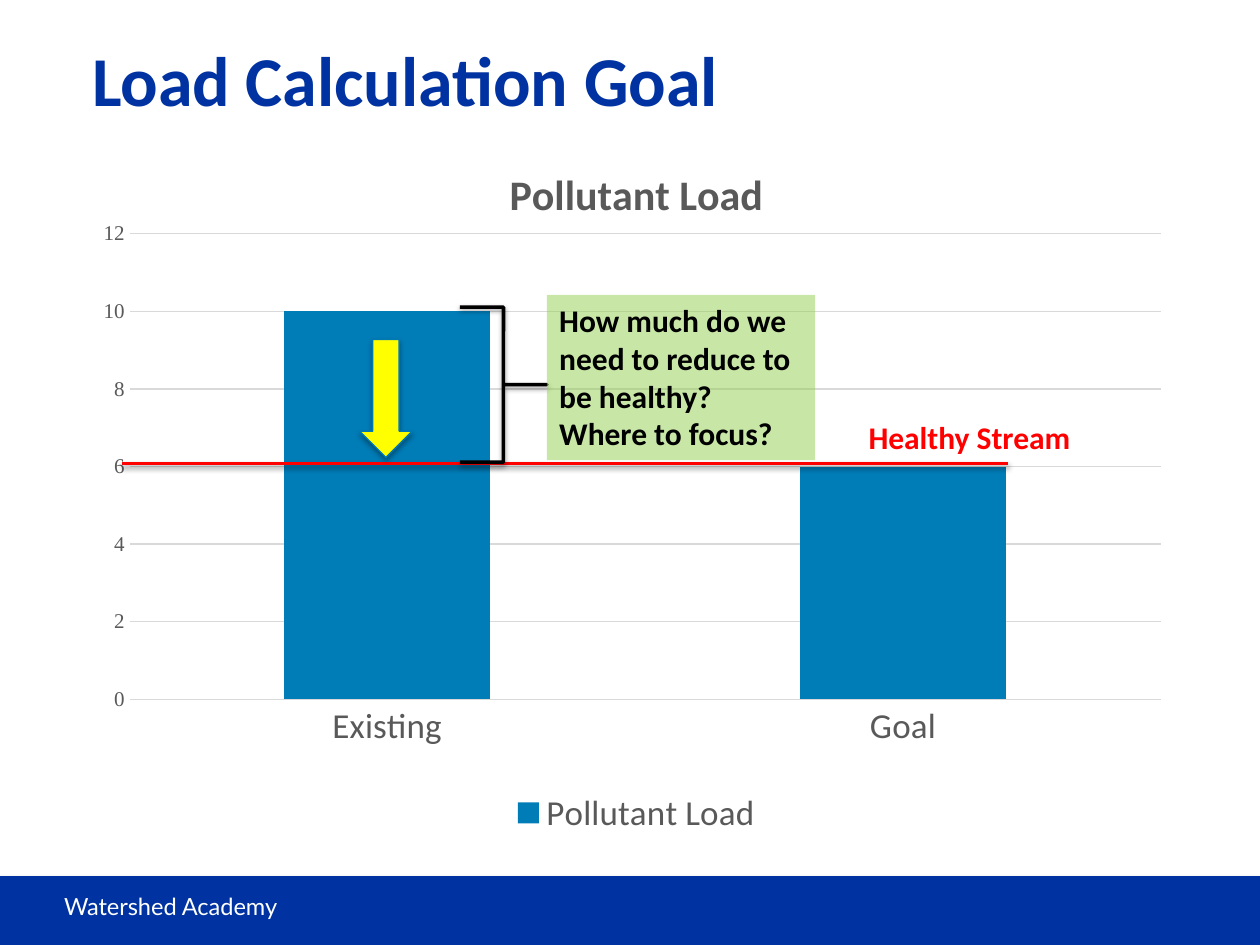
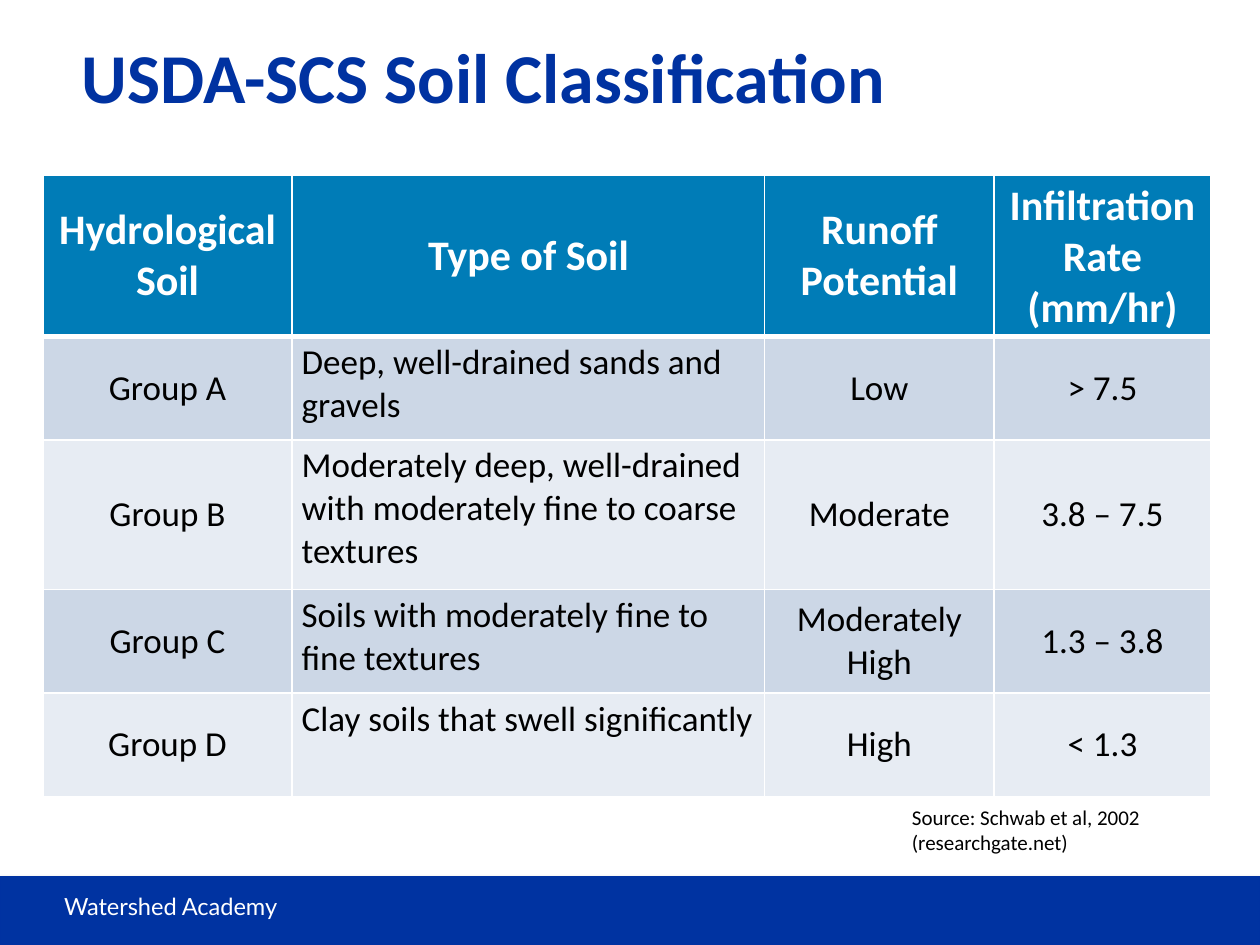
from typing import NamedTuple

from lxml.etree import SubElement
from pptx import Presentation
from pptx.chart.data import CategoryChartData
from pptx.dml.color import RGBColor
from pptx.enum.chart import XL_CHART_TYPE, XL_LEGEND_POSITION, XL_TICK_MARK
from pptx.enum.shapes import MSO_CONNECTOR, MSO_SHAPE
from pptx.enum.text import MSO_ANCHOR, PP_ALIGN
from pptx.oxml import parse_xml
from pptx.oxml.ns import nsdecls, qn
from pptx.util import Pt

COLORS = {
    "navy": "0032A1", "band": "0033A1", "blue": "007CB7", "arrow_edge": "0079B3",
    "row_dark": "CCD7E6", "row_light": "E7ECF3", "green": "92D050", "yellow": "FFFF00",
    "red": "FF0000", "gray": "595959", "grid": "D9D9D9", "white": "FFFFFF", "black": "000000",
}


class Area(NamedTuple):
    left: float
    top: float
    width: float
    height: float

    def lengths(self) -> list:
        return [Pt(value) for value in self]


class TextStyle(NamedTuple):
    size: float
    color: str = "black"
    bold: bool = False
    name: str = "Calibri"


TITLE = TextStyle(40, "navy", True)
FOOTER = TextStyle(13.5, "white", name="Lato")
CALLOUT = TextStyle(18, bold=True)
THRESHOLD = TextStyle(18, "red", True)
SOURCE = TextStyle(12)
CHART_TITLE = TextStyle(24, "gray", True)
CHART_LABEL = TextStyle(20, "gray")
CHART_NUMBER = TextStyle(12, "gray", name="Times New Roman")
TABLE_HEAD = TextStyle(24, "white", True)
TABLE_BODY = TextStyle(20)

COLUMN_WIDTHS = [142.5, 270, 131, 124]
ROW_HEIGHTS = [85.7, 59.1, 85.7, 59.1, 59.1]
SOIL_ROWS = [
    ["Hydrological Soil", "Type of Soil", "Runoff Potential", "Infiltration Rate (mm/hr)"],
    ["Group A", "Deep, well-drained sands and gravels", "Low", "> 7.5"],
    ["Group B", "Moderately deep, well-drained with moderately fine to coarse textures",
     "Moderate", "3.8 – 7.5"],
    ["Group C", "Soils with moderately fine to fine textures", "Moderately High", "1.3 – 3.8"],
    ["Group D", "Clay soils that swell significantly", "High", "< 1.3"],
]
DESCRIPTION_COLUMN = 1


def rgb(color: str) -> RGBColor:
    return RGBColor.from_string(COLORS[color])


def style_font(font, style: TextStyle) -> None:
    font.name = style.name
    font.size = Pt(style.size)
    font.bold = style.bold
    font.color.rgb = rgb(style.color)


def write(frame, lines: list[str], style: TextStyle, align=PP_ALIGN.LEFT) -> None:
    frame.word_wrap = True
    for index, line in enumerate(lines):
        para = frame.add_paragraph() if index else frame.paragraphs[0]
        para.alignment = align
        span = para.add_run()
        span.text = line
        style_font(span.font, style)


def add_text(page, area: Area, text: str, style: TextStyle) -> None:
    box = page.shapes.add_textbox(*area.lengths())
    write(box.text_frame, [text], style)


def set_line(line, color: str, width: float) -> None:
    line.color.rgb = rgb(color)
    line.width = Pt(width)


def cast_shadow(shape, alpha: int = 35, distance: float = 1.8) -> None:
    """Add a soft downward shadow; call it once fill and line are set."""
    effects = SubElement(shape._element.spPr, qn("a:effectLst"))
    effects.append(parse_xml(
        f'<a:outerShdw {nsdecls("a")} blurRad="{Pt(3.1)}" dist="{Pt(distance)}" dir="5400000"'
        f' rotWithShape="0"><a:srgbClr val="{COLORS["black"]}"><a:alpha val="{alpha * 1000}"/>'
        '</a:srgbClr></a:outerShdw>'))


def add_shape(page, kind, area: Area, fill: str | None = None,
              edge: str | None = None, edge_width: float = 0.75):
    shape = page.shapes.add_shape(kind, *area.lengths())
    if fill:
        shape.fill.solid()
        shape.fill.fore_color.rgb = rgb(fill)
    else:
        shape.fill.background()
    if edge:
        set_line(shape.line, edge, edge_width)
    else:
        shape.line.fill.background()
    return shape


def add_page(deck, title: str, title_area: Area):
    """Add a slide with the shared footer band and title."""
    page = deck.slides.add_slide(deck.slide_layouts[5])
    band = add_shape(page, MSO_SHAPE.RECTANGLE, Area(0, 501, 720, 38.5), "band", "navy")
    cast_shadow(band)
    add_text(page, Area(29.5, 506, 242, 24), "Watershed Academy", FOOTER)
    heading = page.shapes.title
    heading.left, heading.top, heading.width, heading.height = title_area.lengths()
    heading.text_frame.vertical_anchor = MSO_ANCHOR.MIDDLE
    write(heading.text_frame, [title], TITLE)
    return page


def place_plot(chart, x: float, y: float, width: float, height: float) -> None:
    """Fix the inner plot area, in fractions of the chart."""
    plot_area = chart._chartSpace.chart.plotArea
    for layout in plot_area.findall(qn("c:layout")):
        plot_area.remove(layout)
    values = {"layoutTarget": "inner", "xMode": "edge", "yMode": "edge",
              "x": x, "y": y, "w": width, "h": height}
    parts = "".join(f'<c:{tag} val="{value}"/>' for tag, value in values.items())
    plot_area.insert(0, parse_xml(
        f'<c:layout {nsdecls("c")}><c:manualLayout>{parts}</c:manualLayout></c:layout>'))


def add_load_chart(page) -> None:
    data = CategoryChartData()
    data.categories = ["Existing", "Goal"]
    data.add_series("Pollutant Load", [10, 6])
    area = Area(45.4, 78.5, 636.5, 402.5)
    chart = page.shapes.add_chart(XL_CHART_TYPE.COLUMN_STACKED, *area.lengths(), data).chart
    style_font(chart.font, CHART_NUMBER)
    chart.has_title = True
    write(chart.chart_title.text_frame, ["Pollutant Load"], CHART_TITLE, PP_ALIGN.CENTER)
    chart.chart_title.include_in_layout = False
    chart.has_legend = True
    chart.legend.position = XL_LEGEND_POSITION.BOTTOM
    chart.legend.include_in_layout = False
    style_font(chart.legend.font, CHART_LABEL)

    plot = chart.plots[0]
    plot.gap_width, plot.overlap, plot.vary_by_categories = 150, 100, False
    bars = plot.series[0].format.fill
    bars.solid()
    bars.fore_color.rgb = rgb("blue")

    for axis, style in ((chart.category_axis, CHART_LABEL), (chart.value_axis, CHART_NUMBER)):
        axis.major_tick_mark = axis.minor_tick_mark = XL_TICK_MARK.NONE
        style_font(axis.tick_labels.font, style)
    set_line(chart.category_axis.format.line, "grid", 0.75)
    loads = chart.value_axis
    loads.minimum_scale, loads.maximum_scale, loads.major_unit = 0, 12, 2
    loads.format.line.fill.background()
    set_line(loads.major_gridlines.format.line, "grid", 0.75)
    place_plot(chart, 0.045, 0.137, 0.926, 0.661)


def build_load_page(deck) -> None:
    page = add_page(deck, "Load Calculation Goal", Area(45.4, 10.8, 556, 67.7))
    add_load_chart(page)

    threshold = page.shapes.add_connector(
        MSO_CONNECTOR.STRAIGHT, Pt(70), Pt(264.8), Pt(576), Pt(264.8))
    set_line(threshold.line, "red", 2)
    cast_shadow(threshold, 38, 1.6)

    arrow = add_shape(page, MSO_SHAPE.DOWN_ARROW, Area(205.6, 194, 30, 67.4),
                      "yellow", "arrow_edge")
    cast_shadow(arrow)

    bracket = add_shape(page, MSO_SHAPE.RIGHT_BRACE, Area(262.8, 175.5, 49.8, 88.6),
                        edge="black", edge_width=2)
    bracket.adjustments[0] = 0
    bracket.adjustments[1] = 0.5
    cast_shadow(bracket, 38, 1.6)

    callout = add_shape(page, MSO_SHAPE.RECTANGLE, Area(312.5, 168.5, 153.3, 94.5), "green")
    callout.shadow.inherit = False
    tint = callout._element.spPr.find(qn("a:solidFill"))[0]
    SubElement(tint, qn("a:alpha")).set("val", "50000")
    callout.text_frame.vertical_anchor = MSO_ANCHOR.TOP
    write(callout.text_frame,
          ["How much do we need to reduce to be healthy?", "Where to focus?"], CALLOUT)
    add_text(page, Area(489.2, 235.5, 168, 29), "Healthy Stream", THRESHOLD)


def set_borders(cell, top: float, bottom: float) -> None:
    """Draw white cell borders; call it before the fill is set."""
    properties = cell._tc.get_or_add_tcPr()
    for side, width in {"L": 1, "R": 1, "T": top, "B": bottom}.items():
        properties.append(parse_xml(
            f'<a:ln{side} {nsdecls("a")} w="{Pt(width)}"><a:solidFill>'
            f'<a:srgbClr val="{COLORS["white"]}"/></a:solidFill></a:ln{side}>'))


def fill_cell(cell, text: str, row: int, column: int) -> None:
    set_borders(cell, top=3 if row == 1 else 1, bottom=3 if row == 0 else 1)
    cell.margin_left = cell.margin_right = Pt(5.4)
    cell.margin_top = cell.margin_bottom = Pt(2.7)
    fill_color = "blue" if row == 0 else ("row_dark" if row % 2 else "row_light")
    cell.fill.solid()
    cell.fill.fore_color.rgb = rgb(fill_color)
    is_description = row > 0 and column == DESCRIPTION_COLUMN
    cell.vertical_anchor = MSO_ANCHOR.TOP if is_description else MSO_ANCHOR.MIDDLE
    write(cell.text_frame, [text], TABLE_BODY if row else TABLE_HEAD,
          PP_ALIGN.LEFT if is_description else PP_ALIGN.CENTER)


def build_soil_page(deck) -> None:
    page = add_page(deck, "USDA-SCS Soil Classification", Area(39.6, 15.8, 569.5, 54.7))
    area = Area(24.5, 100.4, sum(COLUMN_WIDTHS), sum(ROW_HEIGHTS))
    table = page.shapes.add_table(
        len(ROW_HEIGHTS), len(COLUMN_WIDTHS), *area.lengths()).table
    table.first_row = table.horz_banding = False
    for column, width in zip(table.columns, COLUMN_WIDTHS):
        column.width = Pt(width)
    for row, height in zip(table.rows, ROW_HEIGHTS):
        row.height = Pt(height)
    for row_index, texts in enumerate(SOIL_ROWS):
        for column_index, text in enumerate(texts):
            fill_cell(table.cell(row_index, column_index), text, row_index, column_index)
    add_text(page, Area(514, 456, 178, 36), "Source: Schwab et al, 2002 (researchgate.net)", SOURCE)


def main() -> None:
    deck = Presentation()
    deck.slide_width, deck.slide_height = Pt(720), Pt(540)
    build_load_page(deck)
    build_soil_page(deck)
    deck.save("out.pptx")


if __name__ == "__main__":
    main()
